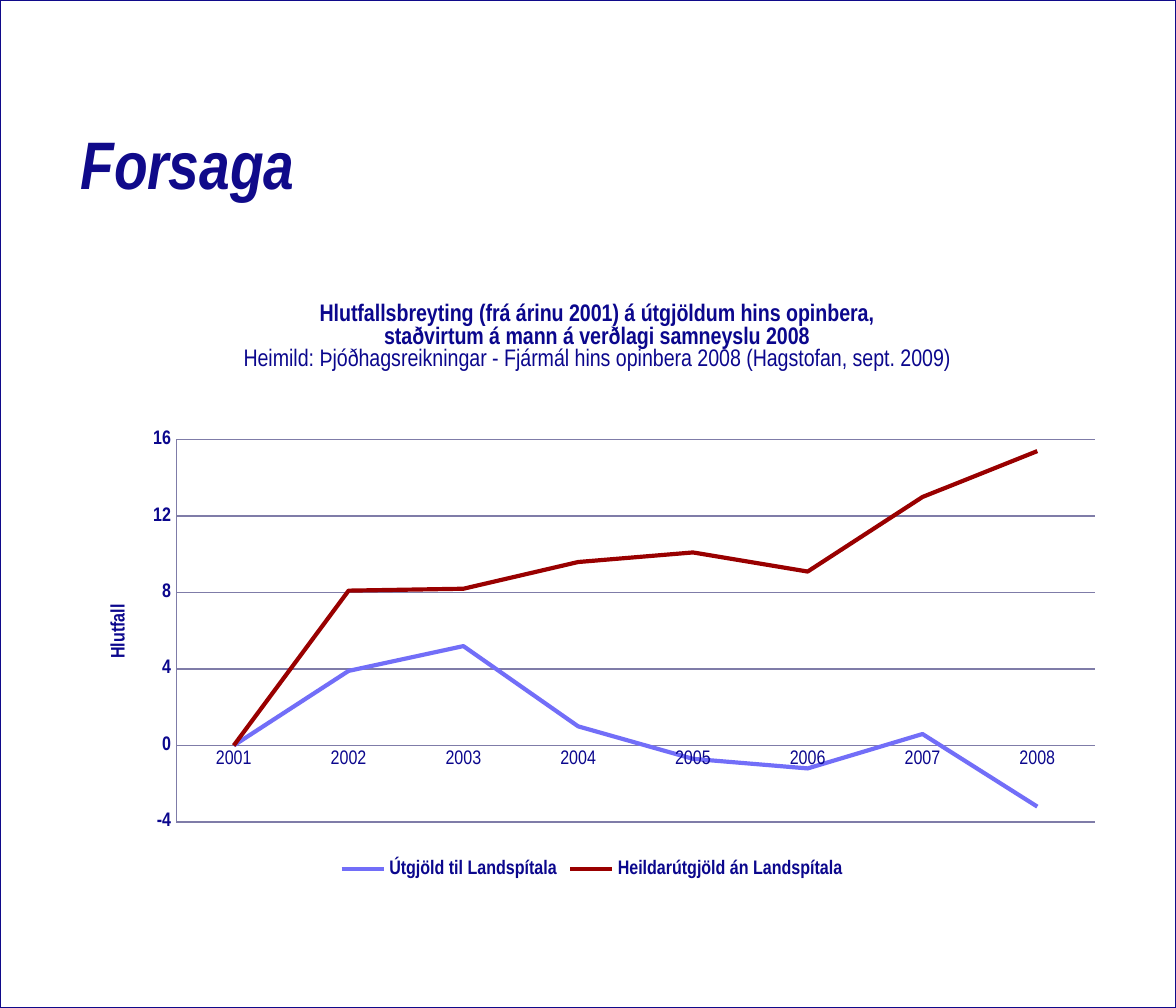
import pptx
import pptx.chart.data
import pptx.dml.color
import pptx.enum.chart
import pptx.enum.shapes
import pptx.enum.text
import pptx.oxml
import pptx.oxml.ns
import pptx.util

PX = 6804  # EMU per px, 134.4 px to the inch
FONT = "Arial Narrow"
COLORS = {"border": "100A8A", "text": "0B078D", "grid": "7F7CA8",
          "hospital": "726EF8", "other": "990000"}


def rgb(name):
    return pptx.dml.color.RGBColor.from_string(COLORS[name])


def write(p, text, size=10.5, bold=False, italic=False, color="text"):
    r = p.add_run()
    r.text = text
    r.font.name, r.font.size = FONT, pptx.util.Pt(size)
    r.font.bold, r.font.italic = bold, italic
    r.font.color.rgb = rgb(color)


prs = pptx.Presentation()
prs.slide_width, prs.slide_height = 1176 * PX, 1008 * PX
s = prs.slides.add_slide(prs.slide_layouts[5])

# Slide title
title = s.shapes.title
title.left, title.top, title.width, title.height = 67 * PX, 67 * PX, 1052 * PX, 191 * PX
tf = title.text_frame
tf.vertical_anchor = pptx.enum.text.MSO_ANCHOR.MIDDLE
tf.paragraphs[0].alignment = pptx.enum.text.PP_ALIGN.LEFT
write(tf.paragraphs[0], "Forsaga", size=36, bold=True, italic=True, color="border")

# Slide border
border = s.shapes.add_shape(pptx.enum.shapes.MSO_SHAPE.RECTANGLE,
                            0, 0, prs.slide_width, prs.slide_height)
border.shadow.inherit = False
border.fill.background()
border.line.color.rgb = rgb("border")
border.line.width = pptx.util.Pt(1)

# Line chart
data = pptx.chart.data.CategoryChartData()
data.categories = [str(year) for year in range(2001, 2009)]
data.add_series("Útgjöld til Landspítala", [0, 3.9, 5.2, 1, -0.7, -1.2, 0.6, -3.2])
data.add_series("Heildarútgjöld án Landspítala", [0, 8.1, 8.2, 9.6, 10.1, 9.1, 13, 15.4])
chart = s.shapes.add_chart(pptx.enum.chart.XL_CHART_TYPE.LINE,
                           67 * PX, 280 * PX, 1052 * PX, 605 * PX, data).chart
chart.font.name, chart.font.size = FONT, pptx.util.Pt(10.5)
chart.font.color.rgb = rgb("text")
chart.plots[0].vary_by_categories = False
for series, color in zip(chart.plots[0].series, ["hospital", "other"]):
    series.smooth = False
    series.format.line.color.rgb = rgb(color)
    series.format.line.width = pptx.util.Pt(2.25)

# Chart heading
tf = chart.chart_title.text_frame
heading = [("Hlutfallsbreyting (frá árinu 2001) á útgjöldum hins opinbera,", True),
           ("staðvirtum á mann á verðlagi samneyslu 2008", True),
           ("Heimild: Þjóðhagsreikningar - Fjármál hins opinbera 2008 (Hagstofan, sept. 2009)", False)]
for i, (text, bold) in enumerate(heading):
    p = tf.add_paragraph() if i else tf.paragraphs[0]
    write(p, text, size=12.75, bold=bold)

# Axes
years, share = chart.category_axis, chart.value_axis
share.minimum_scale, share.maximum_scale, share.major_unit = -4, 16, 4
share.has_major_gridlines = True
share.tick_labels.font.bold = True
share.tick_labels.number_format = "0"
share.tick_labels.number_format_is_linked = False
write(share.axis_title.text_frame.paragraphs[0], "Hlutfall", bold=True)
for axis in (years, share):
    axis.major_tick_mark = axis.minor_tick_mark = pptx.enum.chart.XL_TICK_MARK.NONE
for line in (years.format.line, share.format.line, share.major_gridlines.format.line):
    line.color.rgb = rgb("grid")
    line.width = pptx.util.Pt(0.75)

# Legend
chart.has_legend = True
legend = chart.legend
legend.position = pptx.enum.chart.XL_LEGEND_POSITION.BOTTOM
legend.include_in_layout = False
legend.font.name, legend.font.size, legend.font.bold = FONT, pptx.util.Pt(10.5), True
legend.font.color.rgb = rgb("text")

# Places inside the chart, as shares of its size
places = [("c:chart/c:plotArea", 0, {"x": 0.104, "y": 0.264, "w": 0.873, "h": 0.632}),
          ("c:chart/c:title", 1, {"x": 0.164, "y": 0.03}),
          ("c:chart/c:plotArea/c:valAx/c:title", 1, {"x": 0.036, "y": 0.53}),
          ("c:chart/c:legend", 1, {"x": 0.255, "y": 0.95})]
for query, index, box in places:
    part = chart._chartSpace.xpath(query)[0]
    for old in part.xpath("c:layout"):
        part.remove(old)
    inner = '<c:layoutTarget val="inner"/>' if "w" in box else ""
    modes = "".join(f'<c:{k}Mode val="edge"/>' for k in "xy")
    sizes = "".join(f'<c:{k} val="{v}"/>' for k, v in box.items())
    part.insert(index, pptx.oxml.parse_xml(
        f'<c:layout {pptx.oxml.ns.nsdecls("c")}><c:manualLayout>'
        f'{inner}{modes}{sizes}</c:manualLayout></c:layout>'))

prs.save("out.pptx")
